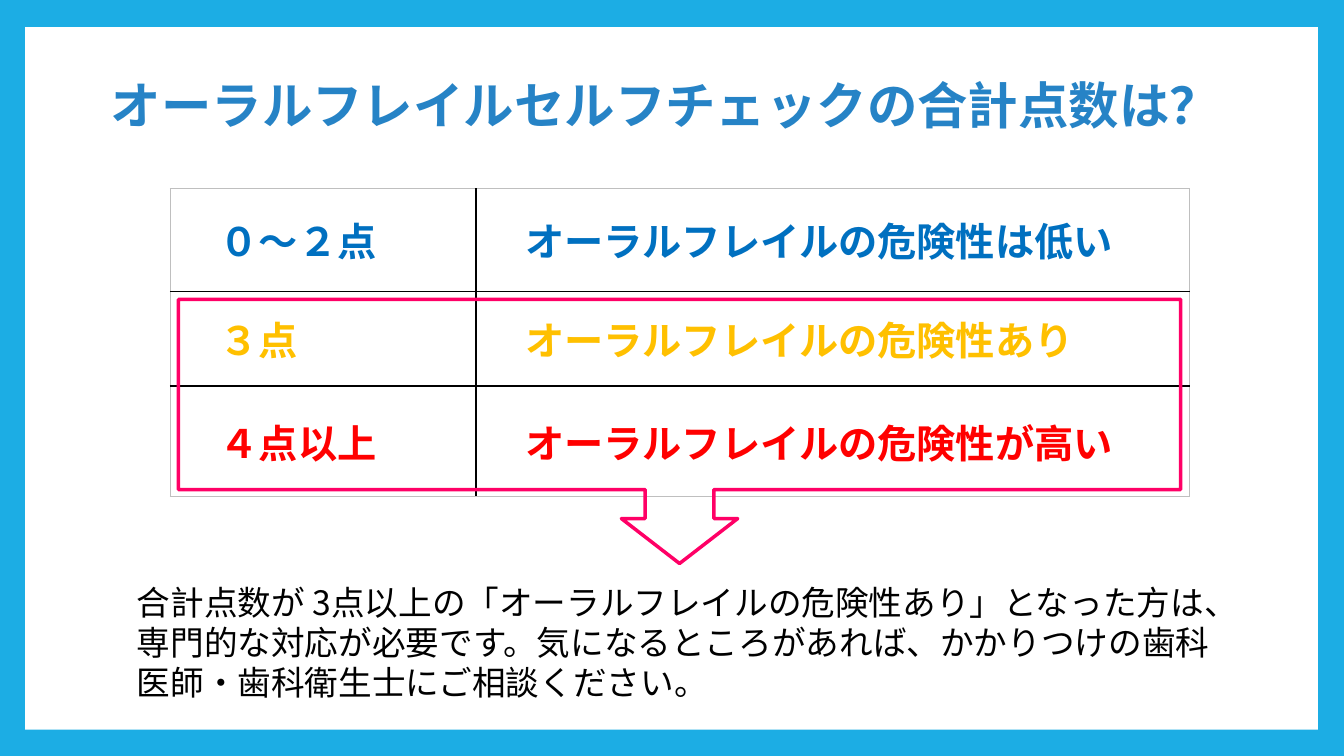
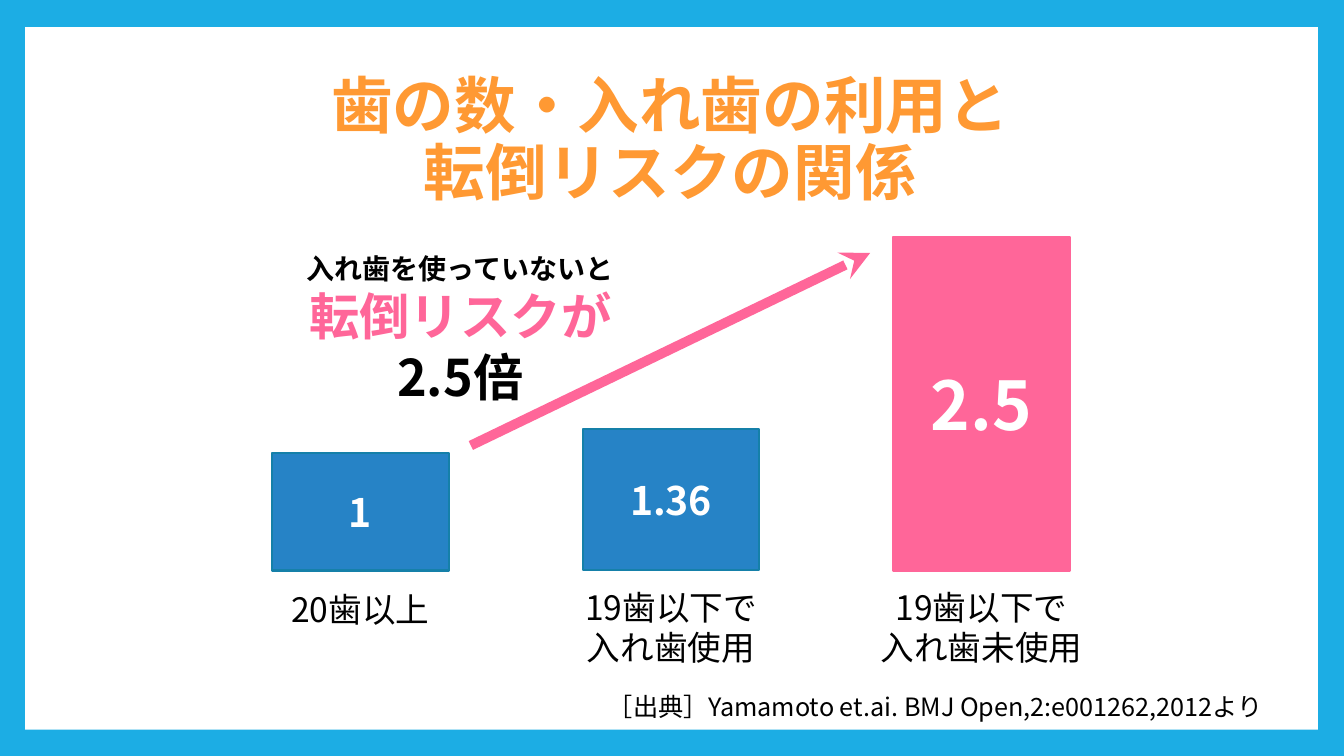
from lxml import etree
from pptx import Presentation
from pptx import util as u
from pptx.dml.color import RGBColor
from pptx.enum import shapes, text
from pptx.oxml import ns

FONT = "Noto Sans CJK JP"
COLORS = {
    "frame": "1CADE4", "white": "FFFFFF", "black": "000000",
    "blue": "2683C6", "edge": "1580A9", "orange": "FF9933", "pink": "FF6699",
    "low": "0070C0", "some": "FFC000", "high": "FF0000",
    "callout": "FF0066", "grid": "BFBFBF",
}
CENTER, LEFT = text.PP_ALIGN.CENTER, text.PP_ALIGN.LEFT
TOP, MIDDLE = text.MSO_ANCHOR.TOP, text.MSO_ANCHOR.MIDDLE


def rgb(name):
    return RGBColor.from_string(COLORS[name])


def add_element(parent, tag, **attributes):
    return etree.SubElement(parent, ns.qn(tag), attributes)


class Deck:
    """Shared style and the slide being built."""

    def __init__(self):
        self.prs = Presentation()
        self.prs.slide_width = u.Inches(13.33)
        self.prs.slide_height = u.Inches(7.5)
        self.slide = None

    def new_slide(self, title, box, size, color):
        self.slide = self.prs.slides.add_slide(self.prs.slide_layouts[6])
        background = self.slide.background.fill
        background.solid()
        background.fore_color.rgb = rgb("frame")
        self.shape((0.25, 0.27, 12.82, 6.97), fill="white")
        self.text(box, [(title, size, color, True)], CENTER, MIDDLE, spacing=0.9)

    def fill_text(self, frame, lines, align=LEFT, anchor=TOP, spacing=None):
        """Each line is (words, size, color, bold); a newline is a line break."""
        frame.word_wrap = True
        frame.vertical_anchor = anchor
        for index, (words, size, color, bold) in enumerate(lines):
            paragraph = frame.add_paragraph() if index else frame.paragraphs[0]
            paragraph.alignment = align
            if spacing:
                paragraph.line_spacing = spacing
            for part_index, part in enumerate(words.split("\n")):
                if part_index:
                    paragraph.add_line_break()
                run = paragraph.add_run()
                run.text = part
                font = run.font
                font.name, font.size, font.bold = FONT, u.Pt(size), bold
                font.color.rgb = rgb(color)
                add_element(run._r.get_or_add_rPr(), "a:ea", typeface=FONT)

    def text(self, box, lines, align=LEFT, anchor=TOP, spacing=None):
        textbox = self.slide.shapes.add_textbox(*map(u.Inches, box))
        self.fill_text(textbox.text_frame, lines, align, anchor, spacing)

    def shape(self, box, fill=None, line=None, width=1.5,
              kind=shapes.MSO_SHAPE.RECTANGLE, adjustments=()):
        shape = self.slide.shapes.add_shape(kind, *map(u.Inches, box))
        shape.shadow.inherit = False
        for index, value in enumerate(adjustments):
            shape.adjustments[index] = value
        if fill:
            shape.fill.solid()
            shape.fill.fore_color.rgb = rgb(fill)
        else:
            shape.fill.background()
        if line:
            shape.line.color.rgb = rgb(line)
            shape.line.width = u.Pt(width)
        else:
            shape.line.fill.background()
        return shape

    def arrow(self, start, end, color, width):
        connector = self.slide.shapes.add_connector(
            shapes.MSO_CONNECTOR.STRAIGHT, *map(u.Inches, start + end))
        connector.line.color.rgb = rgb(color)
        connector.line.width = u.Pt(width)
        add_element(connector.line._get_or_add_ln(), "a:tailEnd", type="stealth")
        add_element(connector._element.spPr, "a:effectLst")

    def border(self, cell, side, color, width):
        line = add_element(cell._tc.get_or_add_tcPr(), f"a:ln{side}",
                           w=str(u.Pt(width)))
        add_element(add_element(line, "a:solidFill"), "a:srgbClr",
                    val=COLORS[color])

    def table(self, box, widths, heights, rows, size, indent):
        """Each row is (color, words of every cell)."""
        table = self.slide.shapes.add_table(
            len(rows), len(widths), *map(u.Inches, box)).table
        table.first_row = table.horz_banding = False
        for column, width in zip(table.columns, widths):
            column.width = u.Inches(width)
        last_row, last_column = len(rows) - 1, len(widths) - 1
        for r, (color, words) in enumerate(rows):
            table.rows[r].height = u.Inches(heights[r])
            for c, label in enumerate(words):
                cell = table.cell(r, c)
                cell.margin_left = u.Inches(indent)
                outer = {"L": c == 0, "R": c == last_column,
                         "T": r == 0, "B": r == last_row}
                for side, is_outer in outer.items():
                    inner_width = 1.5 if side in "LR" else 1
                    self.border(cell, side, "grid" if is_outer else "black",
                                0.75 if is_outer else inner_width)
                cell.fill.background()
                self.fill_text(cell.text_frame, [(label, size, color, True)])
                cell.vertical_anchor = MIDDLE


def score_slide(deck):
    deck.new_slide("オーラルフレイルセルフチェックの合計点数は？",
                   (0.71, 0.28, 11.78, 1.59), 36, "blue")
    # Score table
    scores = [
        ("low", ("０～２点", "オーラルフレイルの危険性は低い")),
        ("some", ("３点", "オーラルフレイルの危険性あり")),
        ("high", ("４点以上", "オーラルフレイルの危険性が高い")),
    ]
    deck.table((1.69, 1.87, 10.11, 3.07), (3.03, 7.08), (1.02, 0.94, 1.1),
               scores, size=28, indent=0.49)
    # Callout from the risky rows to the advice
    deck.shape((1.77, 2.97, 9.94, 2.62), line="callout", width=2.5,
               kind=shapes.MSO_SHAPE.DOWN_ARROW_CALLOUT,
               adjustments=(0.26, 0.22, 0.17, 0.72))
    advice = ("合計点数が 3点以上の「オーラルフレイルの危険性あり」となった方は、"
              "専門的な対応が必要です。気になるところがあれば、"
              "かかりつけの歯科医師・歯科衛生士にご相談ください。")
    deck.text((1.26, 5.72, 10.88, 1.29), [(advice, 24, "black", False)])


def risk_slide(deck):
    deck.new_slide("歯の数・入れ歯の利用と\n転倒リスクの関係",
                   (1.25, 0.67, 10.8, 1.48), 44, "orange")
    # Bars on a common baseline, with captions
    baseline, bar_width, first_left, step = 5.66, 1.75, 2.7, 3.08
    bars = [
        ("1", 1.17, "blue", "edge", 28, ["20歯以上"], 5.79),
        ("1.36", 1.4, "blue", "edge", 28, ["19歯以下で", "入れ歯使用"], 5.77),
        ("2.5", 3.31, "pink", "pink", 48, ["19歯以下で", "入れ歯未使用"], 5.77),
    ]
    caption_width = 2.66
    for index, (risk, height, fill, edge, size, caption, top) in enumerate(bars):
        left = first_left + index * step
        bar = deck.shape((left, baseline - height, bar_width, height), fill, edge)
        deck.fill_text(bar.text_frame, [(risk, size, "white", True)],
                       CENTER, MIDDLE)
        caption_left = left - (caption_width - bar_width) / 2
        deck.text((caption_left, top, caption_width, 0.91),
                  [(words, 24, "black", False) for words in caption], CENTER)
    # Rising risk
    deck.arrow((4.67, 4.42), (8.63, 2.51), "pink", 7)
    deck.text((2.32, 2.45, 4.49, 1.65), [
        ("入れ歯を使っていないと", 20, "black", True),
        ("転倒リスクが", 36, "pink", True),
        ("2.5倍", 36, "black", True),
    ], CENTER)
    # Source
    source = "［出典］Yamamoto et.ai. BMJ Open,2:e001262,2012より"
    deck.text((5.93, 6.72, 7.28, 0.57), [(source, 18, "black", False)],
              anchor=MIDDLE)


def main():
    deck = Deck()
    score_slide(deck)
    risk_slide(deck)
    deck.prs.save("out.pptx")


if __name__ == "__main__":
    main()
